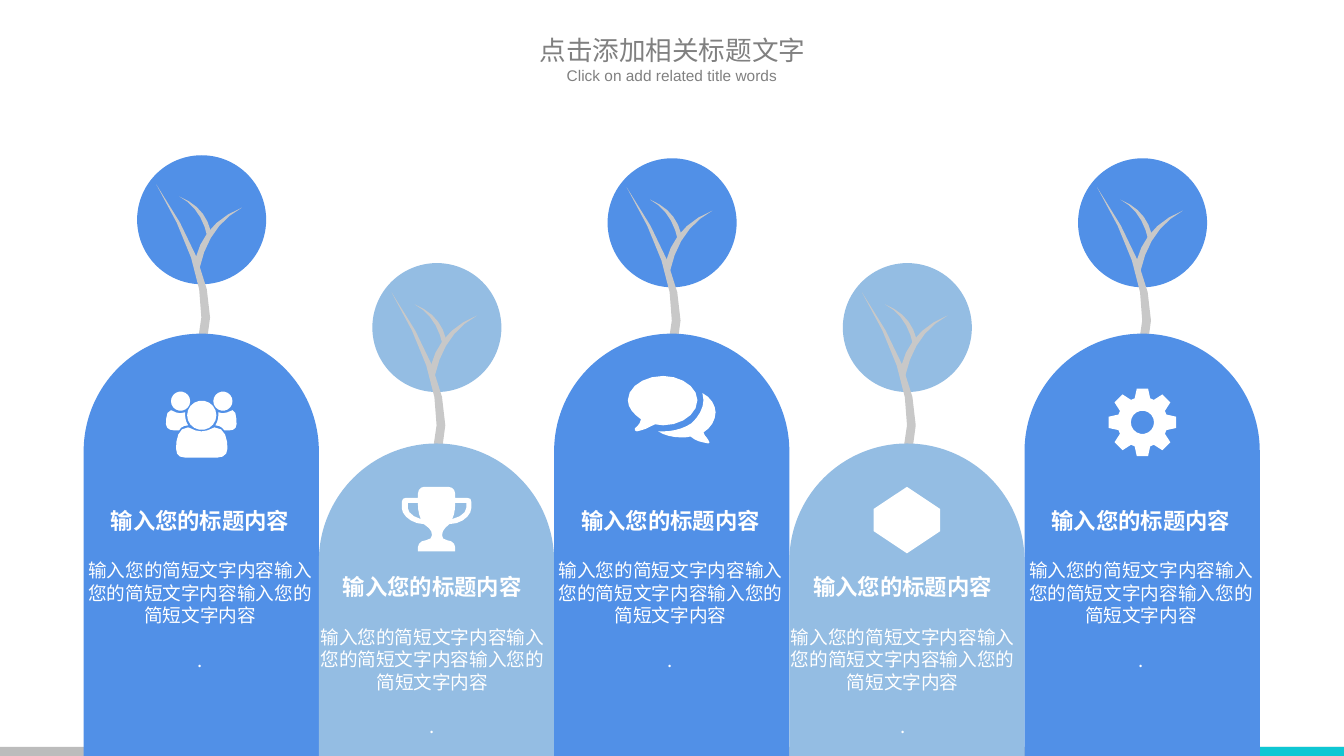
import math
from pptx import Presentation
from pptx import util as u
from pptx.dml.color import RGBColor
from pptx.enum import shapes, text

WIDTH, HEIGHT = 13.33, 7.5
COLUMN_LEFT, COLUMN_WIDTH = 0.83, 2.333
BLUE, LIGHT_BLUE, BRANCH_GREY = "5190E7", "94BDE3", "C8C8C8"
WHITE, TITLE_GREY = "FFFFFF", "808080"
CJK_FONT = "Noto Sans CJK SC"
SEGMENT_LENGTH, MOST_SEGMENTS, CIRCLE_SIDES = 9, 5, 18

HEADING = "输入您的标题内容"
BODY = "输入您的简短文字内容" * 3

# Outlines in hundredths of an inch: M move, L line, C curve, O circle, Z close
TREE = [
    "M 69 186 L 60 186 C 71 147 58 95 19 29 C 64 95 80 147 69 186 Z",
    "M 58 102 C 64 79 79 62 104 52 C 82 64 68 84 62 112 Z",
    "M 73 75 C 69 59 59 48 42 41 C 57 49 66 63 70 82 Z",
]
PEOPLE = (
    "M 13 38 L 8 38 C 4 38 0 36 0 32 C 0 28 0 18 5 18 C 6 18 10 21 14 21 "
    "L 19 20 L 19 23 C 19 26 20 30 22 33 C 18 33 14 35 13 38 Z "
    "O 14.5 9 9.5 O 35.5 23 14.5 O 56.5 9 9.5 "
    "M 51 65 L 19 65 C 13 65 10 62 10 56 C 10 47 12 35 22 35 C 24 35 28 39 35 39 "
    "C 42 39 47 35 48 35 C 59 35 61 47 61 56 C 61 62 57 65 51 65 Z "
    "M 63 38 L 58 38 C 56 35 53 33 49 33 C 51 30 52 26 52 23 L 52 20 "
    "L 56 21 C 61 21 65 18 66 18 C 70 18 70 28 70 32 C 70 36 67 38 63 38 Z")
TROPHY = (
    "M 69 21 C 69 28 60 37 47 37 L 43 41 C 41 43 40 45 40 48 C 40 50 41 53 45 53 "
    "C 49 53 53 56 53 60 L 53 64 L 16 64 L 16 60 C 16 56 20 53 24 53 C 28 53 30 50 30 48 "
    "C 30 45 29 43 27 41 L 22 37 C 10 37 0 28 0 21 L 0 15 C 0 12 2 11 4 11 L 16 11 "
    "L 16 7 C 16 3 19 0 22 0 L 46 0 C 50 0 53 3 53 7 L 53 11 L 65 11 C 68 11 69 12 69 15 Z "
    "M 16 16 L 6 16 L 6 21 C 6 25 11 30 19 32 C 17 28 16 23 16 16 Z "
    "M 64 16 L 53 16 C 53 23 52 28 50 32 C 59 30 64 25 64 21 Z")
SPEECH = (
    "M 35 49 L 27 48 C 22 50 18 53 13 54 L 9 55 L 7 54 "
    "L 7 52 C 10 49 12 48 13 43 C 6 38 0 32 0 24 C 0 11 16 0 35 0 "
    "C 53 0 69 11 69 24 C 69 38 53 49 35 49 Z "
    "M 75 56 C 76 60 79 61 80 64 L 81 66 L 80 67 "
    "L 75 66 C 70 65 67 64 62 60 C 59 61 57 61 53 61 C 45 61 36 59 30 55 "
    "L 35 55 C 45 55 56 52 63 47 C 70 41 75 32 75 24 L 74 17 "
    "C 82 21 87 29 87 36 C 87 44 82 52 75 56 Z")
HEXAGON = "M 33 0 L 66 22 L 66 44 L 33 66 L 0 44 L 0 22 Z"


def gear_outline(center=34, teeth=8):
    points = []
    for tooth in range(teeth):
        for offset, radius in ((-18, 25), (-9.5, 34), (9.5, 34), (18, 25)):
            angle = math.radians(tooth * 360 / teeth + offset)
            points.append(f"{center + radius * math.cos(angle):.2f} "
                          f"{center + radius * math.sin(angle):.2f}")
    return f"M {' L '.join(points)} Z O {center} {center} 11.5"


def color(hex_string):
    return RGBColor.from_string(hex_string)


def paint(shape, fill):
    shape.shadow.inherit = False
    shape.fill.solid()
    shape.fill.fore_color.rgb = color(fill)
    shape.line.fill.background()
    return shape


def add_preset(slide, kind, box, fill):
    return paint(slide.shapes.add_shape(kind, *map(u.Inches, box)), fill)


def curve_points(start, controls):
    """Points along a cubic curve, more of them on a longer one."""
    corners = [start, *controls]
    steps = min(MOST_SEGMENTS, math.ceil(math.dist(start, controls[-1]) / SEGMENT_LENGTH) + 1)
    for step in range(1, steps + 1):
        t = step / steps
        weights = ((1 - t) ** 3, 3 * t * (1 - t) ** 2, 3 * t * t * (1 - t), t ** 3)
        yield tuple(sum(w * c[axis] for w, c in zip(weights, corners)) for axis in (0, 1))


def contours(outline):
    """Split an outline into closed lists of points."""
    words = iter(outline.split())
    result = []
    for command in words:
        count = {"M": 2, "L": 2, "C": 6, "O": 3, "Z": 0}[command]
        numbers = [float(next(words)) for _ in range(count)]
        pairs = list(zip(numbers[::2], numbers[1::2]))
        if command == "M":
            result.append(pairs)
        elif command == "L":
            result[-1] += pairs
        elif command == "C":
            result[-1] += curve_points(result[-1][-1], pairs)
        elif command == "O":
            x, y, radius = numbers
            angles = [math.tau * side / CIRCLE_SIDES for side in range(CIRCLE_SIDES)]
            result.append([(x + radius * math.cos(a), y + radius * math.sin(a)) for a in angles])
    return result


def add_outline(slide, outline, left, top, fill):
    builder = None
    for contour in contours(outline):
        (x, y), *rest = [(u.Inches(px / 100), u.Inches(py / 100)) for px, py in contour]
        if builder is None:
            builder = slide.shapes.build_freeform(x, y, scale=1.0)
        else:
            builder.move_to(x, y)
        builder.add_line_segments(rest, close=True)
    return paint(builder.convert_to_shape(u.Inches(left), u.Inches(top)), fill)


def add_text_frame(slide, box, margins=(0, 0)):
    frame = slide.shapes.add_textbox(*map(u.Inches, box)).text_frame
    frame.word_wrap = True
    frame.margin_left = frame.margin_right = u.Inches(margins[0])
    frame.margin_top = frame.margin_bottom = u.Inches(margins[1])
    return frame


def write(frame, words, size, fill, font=CJK_FONT, bold=False, before=0, leading=None):
    paragraph = frame.paragraphs[0]
    if paragraph.runs:
        paragraph = frame.add_paragraph()
    paragraph.alignment = text.PP_ALIGN.CENTER
    paragraph.space_before = u.Pt(before)
    if leading:
        paragraph.line_spacing = u.Pt(leading)
    run = paragraph.add_run()
    run.text = words
    run.font.size, run.font.bold, run.font.name = u.Pt(size), bold, font
    run.font.color.rgb = color(fill)
    east_asian = run.font._element.makeelement(
        "{http://schemas.openxmlformats.org/drawingml/2006/main}ea", {"typeface": font})
    run.font._element.append(east_asian)


def add_footer(slide):
    top, height = HEIGHT - 0.09, 0.09
    add_preset(slide, shapes.MSO_SHAPE.RECTANGLE, (0, top, WIDTH, height), "BCBCBC")
    add_preset(slide, shapes.MSO_SHAPE.RECTANGLE, (10.85, top, WIDTH - 10.85, height), "0FC7D3")


def add_header(slide):
    frame = add_text_frame(slide, (5.08, 0.28, 3.18, 0.39), (0.1, 0.05))
    write(frame, "点击添加相关标题文字", 19, TITLE_GREY, leading=23)
    frame = add_text_frame(slide, (5.46, 0.61, 2.41, 0.39), (0.1, 0.05))
    write(frame, "Click on add related title words", 11, TITLE_GREY, font="Arial")


def add_tree(slide, left, top, fill):
    add_preset(slide, shapes.MSO_SHAPE.OVAL, (left, top, 1.28, 1.28), fill)
    for branch in TREE:
        add_outline(slide, branch, left, top, BRANCH_GREY)


def add_column(slide, box, fill, tree_rise, icon, icon_drop, text_shift):
    left, top, width, height = box
    add_tree(slide, left + 0.53, top - tree_rise, fill)
    # Dome
    dome = add_preset(slide, shapes.MSO_SHAPE.ROUND_2_SAME_RECTANGLE, box, fill)
    dome.adjustments[0], dome.adjustments[1] = 0.5, 0
    # Icon, centred in the dome
    icon_width = max(x for contour in contours(icon) for x, _ in contour) / 100
    add_outline(slide, icon, left + (width - icon_width) / 2, top + icon_drop, WHITE)
    # Heading and body
    shift_x, shift_y = text_shift
    frame = add_text_frame(slide, (left + shift_x, top + shift_y, 2.37, 1.66))
    write(frame, HEADING, 16, WHITE, bold=True, leading=19.2)
    write(frame, BODY, 13.3, WHITE, before=18, leading=16)
    write(frame, ".", 13.3, WHITE, before=16, leading=16)


def main():
    presentation = Presentation()
    presentation.slide_width, presentation.slide_height = u.Inches(WIDTH), u.Inches(HEIGHT)
    slide = presentation.slides.add_slide(presentation.slide_layouts[6])
    add_footer(slide)
    columns = [(PEOPLE, 0.58, 1.77), (TROPHY, 0.43, 1.79), (SPEECH, 0.42, 1.74),
               (HEXAGON, 0.43, 1.79), (gear_outline(), 0.54, 1.74)]
    for index, (icon, icon_drop, tree_rise) in enumerate(columns):
        tall = index % 2 == 0
        top = 3.31 if tall else 4.4
        box = (COLUMN_LEFT + index * COLUMN_WIDTH, top, COLUMN_WIDTH, HEIGHT - top)
        add_column(slide, box, BLUE if tall else LIGHT_BLUE, tree_rise, icon, icon_drop,
                   (-0.03, 1.72) if tall else (-0.06, 1.29))
    add_header(slide)
    presentation.save("out.pptx")


if __name__ == "__main__":
    main()
